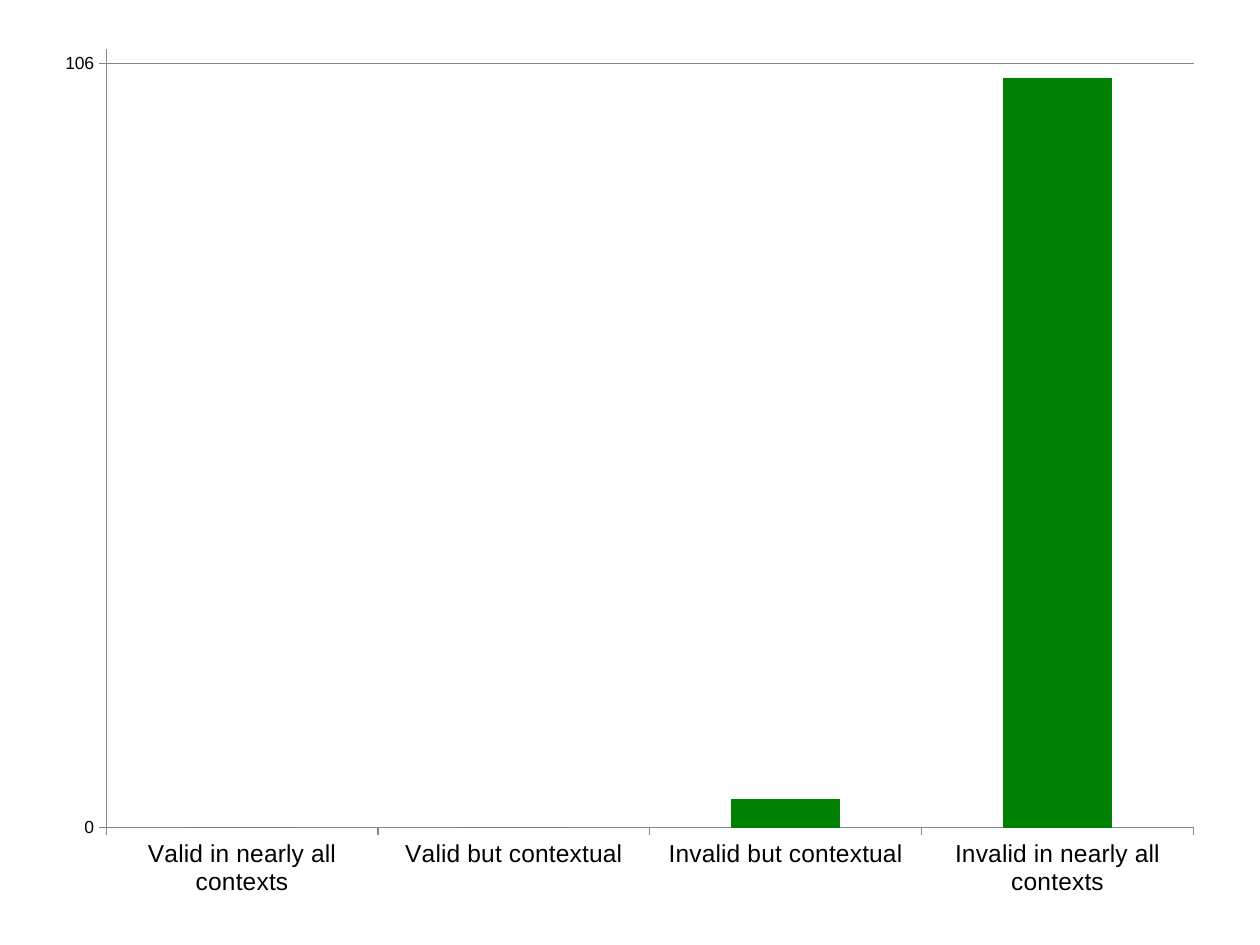
"""Build a slide with a column chart of counts by validity group."""
from lxml.etree import SubElement
from pptx import Presentation
from pptx.chart.data import CategoryChartData
from pptx.dml.color import RGBColor
from pptx.enum.chart import XL_CHART_TYPE, XL_TICK_MARK
from pptx.oxml.ns import qn
from pptx.util import Inches, Pt


def tint(code):
    return RGBColor.from_string(code)


deck = Presentation()
deck.slide_width, deck.slide_height = Inches(10), Inches(7.5)
slide = deck.slides.add_slide(deck.slide_layouts[6])

counts = {
    "Valid in nearly all contexts": 0,
    "Valid but contextual": 0,
    "Invalid but contextual": 4,
    "Invalid in nearly all contexts": 104,
}
data = CategoryChartData()
data.categories = list(counts)
data.add_series("Series 1", list(counts.values()))
chart = slide.shapes.add_chart(
    XL_CHART_TYPE.COLUMN_CLUSTERED,
    Inches(0.33), Inches(0.25), Inches(9.33), Inches(7), data,
).chart
chart.has_legend = False
chart.has_title = False
chart.font.name = "Arial"
chart.font.color.rgb = tint("000000")

plot = chart.plots[0]
plot.vary_by_categories = False
plot.gap_width = 150
fill = plot.series[0].format.fill
fill.solid()
fill.fore_color.rgb = tint("008000")

groups, scale = chart.category_axis, chart.value_axis
limits = {
    "minimum_scale": 0,
    "maximum_scale": 108,
    "major_unit": 106,
    "has_major_gridlines": True,
}
for name, value in limits.items():
    setattr(scale, name, value)
groups.has_major_gridlines = False

for axis, size in ((groups, 14), (scale, 10)):
    axis.major_tick_mark = XL_TICK_MARK.OUTSIDE
    axis.minor_tick_mark = XL_TICK_MARK.NONE
    font = axis.tick_labels.font
    font.size, font.name = Pt(size), "Arial"
    font.color.rgb = tint("000000")
for item in (groups, scale, scale.major_gridlines):
    item.format.line.color.rgb = tint("868686")
    item.format.line.width = Pt(0.75)

area = chart.element.find(".//" + qn("c:plotArea"))
for old in area.findall(qn("c:layout")):
    area.remove(old)
frame = SubElement(area, qn("c:layout"))
area.insert(0, frame)
manual = SubElement(frame, qn("c:manualLayout"))
place = {
    "layoutTarget": "inner", "xMode": "edge", "yMode": "edge",
    "x": 0.055, "y": 0.02, "w": 0.925, "h": 0.883,
}
for tag, value in place.items():
    SubElement(manual, qn("c:" + tag)).set("val", str(value))

deck.save("out.pptx")
